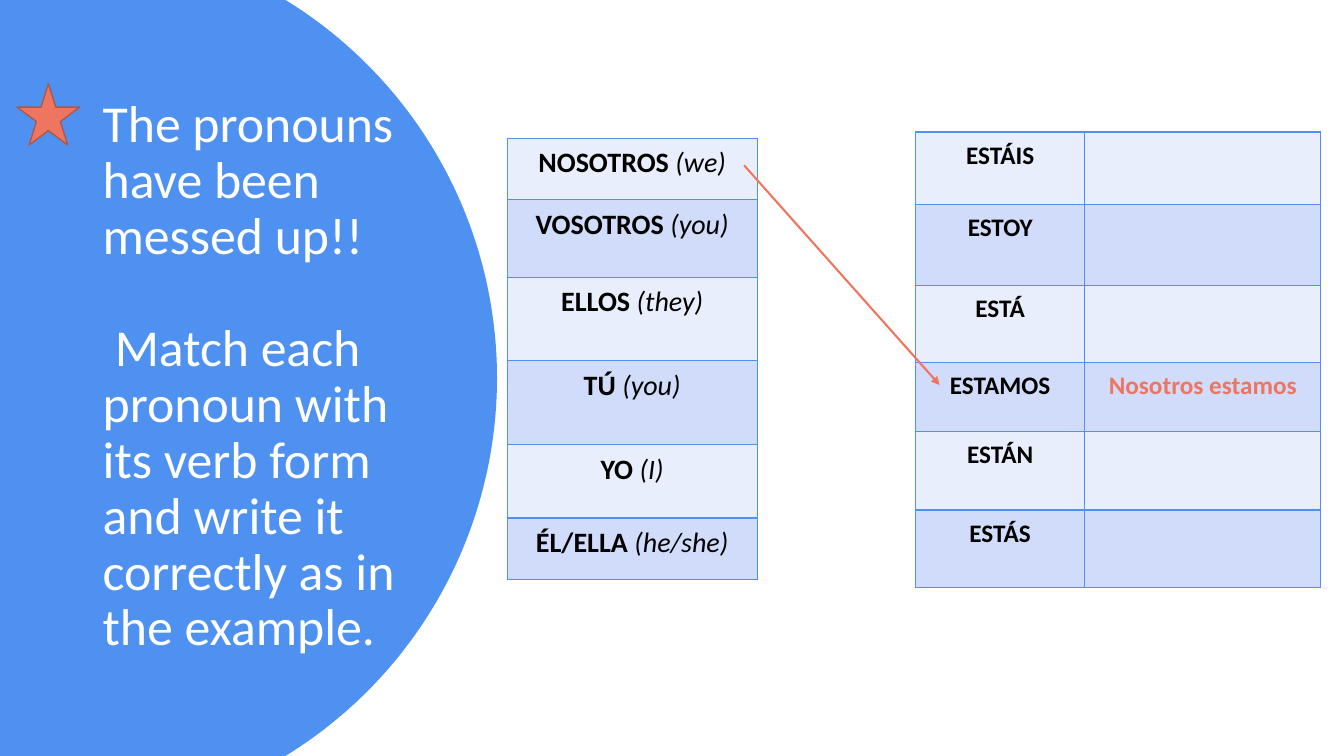
from math import asin, cos, sin

from lxml import etree
from pptx import Presentation
from pptx.dml.color import RGBColor
from pptx.enum.shapes import MSO_CONNECTOR, MSO_SHAPE
from pptx.enum.text import MSO_ANCHOR, PP_ALIGN
from pptx.oxml.ns import qn
from pptx.util import Pt

PX = 9144  # 100 px to the inch
STAR, STRAIGHT = MSO_SHAPE.STAR_5_POINT, MSO_CONNECTOR.STRAIGHT
MIDDLE, CENTER = MSO_ANCHOR.MIDDLE, PP_ALIGN.CENTER

THEME = {
    "font": "Calibri",
    "blue": "4E91F0", "coral": "EE7661", "coral_dark": "B05748",
    "white": "FFFFFF", "black": "000000", "bands": ("E9EEFC", "D0DCF9"),
    "title_size": 37, "pronoun_size": 20, "verb_size": 18,
}


def add_run(p, text, size, color, bold=False, italic=False):
    r = p.add_run()
    r.text = text
    r.font.name = THEME["font"]
    r.font.size = Pt(size)
    r.font.bold, r.font.italic = bold, italic
    r.font.color.rgb = RGBColor.from_string(color)


def add_grid(left, top, widths, heights, rows, size):
    """Banded, bordered table; each cell is a list of (text, color, bold, italic)."""
    frame = s.shapes.add_table(len(heights), len(widths), left * PX, top * PX,
                               sum(widths) * PX, sum(heights) * PX)
    table = frame.table
    table.first_row = table.horz_banding = False
    for column, width in zip(table.columns, widths):
        column.width = width * PX
    for i, (height, row) in enumerate(zip(heights, rows)):
        table.rows[i].height = height * PX
        for j, runs in enumerate(row):
            cell = table.cell(i, j)
            cell.margin_left = cell.margin_right = 16 * PX
            cell.margin_top = cell.margin_bottom = 8 * PX
            cell.fill.solid()
            cell.fill.fore_color.rgb = RGBColor.from_string(THEME["bands"][i % 2])
            p = cell.text_frame.paragraphs[0]
            p.alignment = CENTER
            for text, color, bold, italic in runs:
                add_run(p, text, size, color, bold, italic)
            tcPr = cell._tc.get_or_add_tcPr()
            for k, side in enumerate(("a:lnL", "a:lnR", "a:lnT", "a:lnB")):
                ln = etree.Element(qn(side), w=str(Pt(1)))
                fill = etree.SubElement(ln, qn("a:solidFill"))
                etree.SubElement(fill, qn("a:srgbClr"), val=THEME["blue"])
                tcPr.insert(k, ln)


prs = Presentation()
prs.slide_width, prs.slide_height = 1333 * PX, 750 * PX
s = prs.slides.add_slide(prs.slide_layouts[6])

# Blue panel with a circular right edge
RADIUS, CENTER_X, CENTER_Y, STEPS = 440, 53, 375, 120
half_angle = asin(CENTER_Y / RADIUS)
angles = [half_angle * (2 * i / STEPS - 1) for i in range(STEPS + 1)]
arc = [(round((CENTER_X + RADIUS * cos(a)) * PX),
        round((CENTER_Y + RADIUS * sin(a)) * PX)) for a in angles]
builder = s.shapes.build_freeform(0, 0)
builder.add_line_segments(arc + [(0, 750 * PX)], close=True)
panel = builder.convert_to_shape()
panel.shadow.inherit = False
panel.fill.solid()
panel.fill.fore_color.rgb = RGBColor.from_string(THEME["blue"])
panel.line.fill.background()

# Instructions
tf = s.shapes.add_textbox(92 * PX, 70 * PX, 323 * PX, 609 * PX).text_frame
tf.word_wrap = True
tf.vertical_anchor = MIDDLE
instructions = (
    "The pronouns have been messed up!!",
    "Match each pronoun with its verb form and write it correctly as in the example.",
)
for i, text in enumerate(instructions):
    p = tf.add_paragraph() if i else tf.paragraphs[0]
    p.line_spacing = 0.9
    if i:
        p.space_before = Pt(40)
        p._p.get_or_add_pPr().set("indent", str(12 * PX))
    add_run(p, text, THEME["title_size"], THEME["white"])

# Verb forms, with one answer filled in
black = THEME["black"]
answers = {"ESTAMOS": [("Nosotros estamos", THEME["coral"], True, False)]}
verbs = ("ESTÁIS", "ESTOY", "ESTÁ", "ESTAMOS", "ESTÁN", "ESTÁS")
verb_rows = [([(verb, black, True, False)], answers.get(verb, [])) for verb in verbs]
add_grid(908, 131, (168, 234), (72, 80, 77, 68, 78, 77), verb_rows, THEME["verb_size"])

star = s.shapes.add_shape(STAR, 17 * PX, 83 * PX, 62 * PX, 61 * PX)
star.shadow.inherit = False
star.fill.solid()
star.fill.fore_color.rgb = RGBColor.from_string(THEME["coral"])
star.line.color.rgb = RGBColor.from_string(THEME["coral_dark"])
star.line.width = Pt(1)

# Pronouns
pronouns = (("NOSOTROS", "we"), ("VOSOTROS", "you"), ("ELLOS", "they"),
            ("TÚ", "you"), ("YO", "I"), ("ÉL/ELLA", "he/she"))
pronoun_rows = [[[(f"{spanish} ", black, True, False), (f"({english})", black, False, True)]]
                for spanish, english in pronouns]
add_grid(503, 137, (248,), (61, 77, 83, 83, 73, 61), pronoun_rows, THEME["pronoun_size"])

# Example match
arrow = s.shapes.add_connector(STRAIGHT, 738 * PX, 164 * PX, 932 * PX, 382 * PX)
arrow.line.color.rgb = RGBColor.from_string(THEME["coral"])
arrow.line.width = Pt(1.5)
etree.SubElement(arrow.line._get_or_add_ln(), qn("a:tailEnd"), type="triangle")
etree.SubElement(arrow._element.spPr, qn("a:effectLst"))

prs.save("out.pptx")
